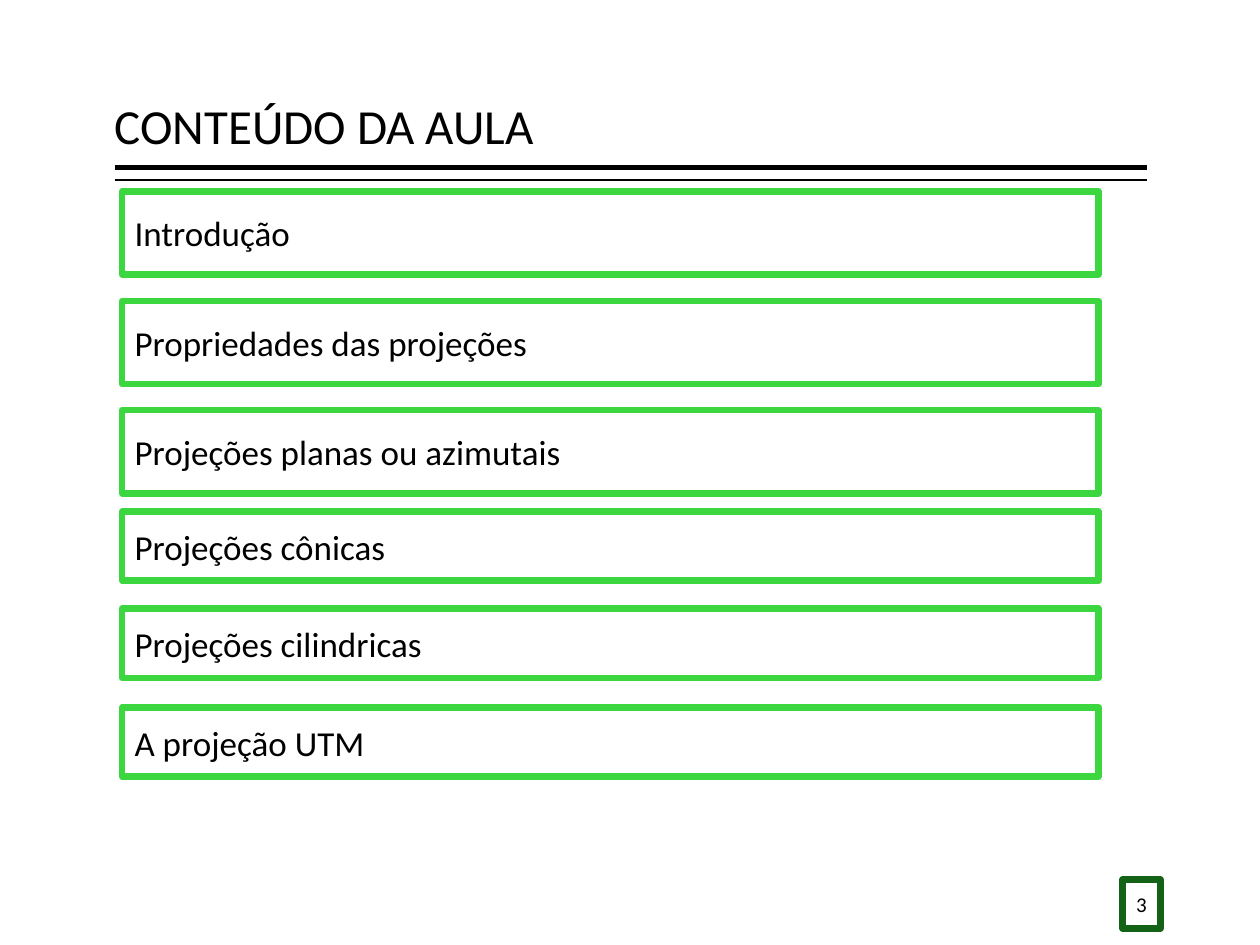
from pptx import Presentation
from pptx.dml.color import RGBColor
from pptx.enum.shapes import MSO_CONNECTOR, MSO_SHAPE
from pptx.enum.text import MSO_ANCHOR, PP_ALIGN
from pptx.oxml.ns import qn
from pptx.util import Pt
from lxml.etree import SubElement

BLACK = RGBColor(0x00, 0x00, 0x00)
WHITE = RGBColor(0xFF, 0xFF, 0xFF)
GREEN = RGBColor(0x3C, 0xD7, 0x40)
DARK = RGBColor(0x14, 0x62, 0x16)


def write(shape, text, size, font="Calibri", color=BLACK, align=PP_ALIGN.LEFT,
          anchor=MSO_ANCHOR.MIDDLE, inset=7.2, space=1.0):
    frame = shape.text_frame
    frame.word_wrap = True
    frame.vertical_anchor = anchor
    frame.margin_left = frame.margin_right = Pt(inset)
    frame.margin_top = frame.margin_bottom = Pt(3.6)
    para = frame.paragraphs[0]
    para.alignment = align
    para.line_spacing = space
    run = para.add_run()
    run.text = text
    run.font.size = Pt(size)
    run.font.name = font
    run.font.color.rgb = color


class Page:
    edge = 3.78

    def __init__(self, deck):
        self.slide = deck.slides.add_slide(deck.slide_layouts[5])

    def title(self, text, left, top, width, height):
        shape = self.slide.shapes.title
        shape.left, shape.top = Pt(left), Pt(top)
        shape.width, shape.height = Pt(width), Pt(height)
        write(shape, text, 28, anchor=MSO_ANCHOR.BOTTOM, inset=0, space=0.9)

    def rule(self, left, right, top, weight):
        line = self.slide.shapes.add_connector(
            MSO_CONNECTOR.STRAIGHT, Pt(left), Pt(top), Pt(right), Pt(top))
        line.line.color.rgb = BLACK
        line.line.width = Pt(weight)
        SubElement(line._element.spPr, qn("a:effectLst"))

    def box(self, text, left, top, width, height, color, size, **style):
        shape = self.slide.shapes.add_shape(
            MSO_SHAPE.RECTANGLE, Pt(left), Pt(top), Pt(width), Pt(height))
        shape.shadow.inherit = False
        shape.fill.solid()
        shape.fill.fore_color.rgb = WHITE
        shape.line.color.rgb = color
        shape.line.width = Pt(self.edge)
        write(shape, text, size, **style)


def main():
    deck = Presentation()
    deck.slide_width, deck.slide_height = Pt(720), Pt(540)
    page = Page(deck)
    page.title("CONTEÚDO DA AULA", 65.5, 5.8, 589.7, 86.4)
    for top, weight in ((95.8, 3), (102.7, 1)):
        page.rule(65.5, 655.2, top, weight)

    topics = (
        ("Introdução", 109.4, 47.5),
        ("Propriedades das projeções", 172.1, 47.5),
        ("Projeções planas ou azimutais", 234.4, 47.5),
        ("Projeções cônicas", 292.3, 39.6),
        ("Projeções cilindricas", 347.8, 39.6),
        ("A projeção UTM", 404.2, 39.6),
    )
    for text, top, height in topics:
        page.box(text, 69.8, top, 558, height, GREEN, 20)
    page.box("3", 641.5, 502.6, 21.6, 28, DARK, 12,
             align=PP_ALIGN.CENTER, inset=0)
    deck.save("out.pptx")


if __name__ == "__main__":
    main()
